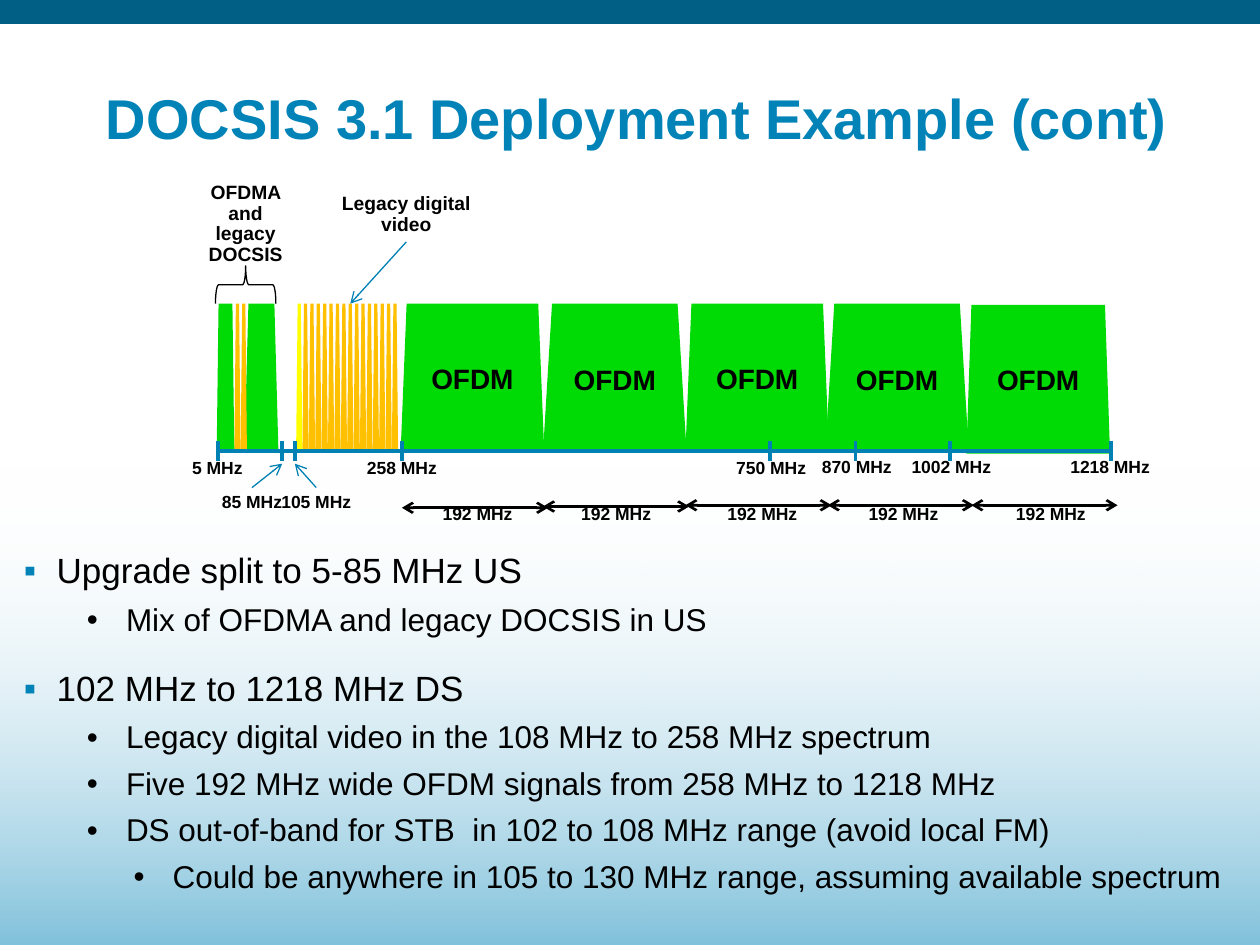
import dataclasses
from typing import Optional

import lxml.etree
import pptx
import pptx.dml.color
import pptx.enum.shapes
import pptx.enum.text
import pptx.oxml
import pptx.oxml.ns
import pptx.util

Inches = pptx.util.Inches
Pt = pptx.util.Pt
Shapes = pptx.enum.shapes.MSO_SHAPE
Align = pptx.enum.text.PP_ALIGN
Anchor = pptx.enum.text.MSO_ANCHOR
qn = pptx.oxml.ns.qn

BLUE, TITLE_BLUE, BLACK, WHITE = "0081B4", "0183B7", "000000", "FFFFFF"
GREEN, ORANGE, YELLOW = "00DA05", "FFC000", "FFFF00"
BAND_TOP, BAND_HEIGHT, STRIPE_WIDTH = 2.41, 1.18, 0.05


@dataclasses.dataclass
class Label:
    text: str
    left: float
    top: float
    width: float
    height: float = 0.25
    size: float = 10
    wrap: bool = False


@dataclasses.dataclass
class Band:
    left: float
    width: float
    color: str
    inset: float = 0.25
    text: str = ""
    top: float = BAND_TOP


@dataclasses.dataclass
class Bullet:
    text: str
    level: int = 0
    space_after: float = 6


@dataclasses.dataclass
class BulletStyle:
    size: float
    indent: float
    hanging: float
    mark: str
    color: str


BULLET_STYLES = [
    BulletStyle(20, 0.26, 0.26, "▪", TITLE_BLUE),
    BulletStyle(18, 0.81, 0.31, "•", BLACK),
    BulletStyle(18, 1.18, 0.31, "•", BLACK),
]
BULLETS = [
    Bullet("Upgrade split to 5-85 MHz US"),
    Bullet("Mix of OFDMA and legacy DOCSIS in US", 1, 18),
    Bullet("102 MHz to 1218 MHz DS"),
    Bullet("Legacy digital video in the 108 MHz to 258 MHz spectrum", 1),
    Bullet("Five 192 MHz wide OFDM signals from 258 MHz to 1218 MHz", 1),
    Bullet("DS out-of-band for STB  in 102 to 108 MHz range (avoid local FM)", 1),
    Bullet("Could be anywhere in 105 to 130 MHz range, assuming available spectrum", 2),
]
FREQUENCY_LABELS = [
    Label("5 MHz", 1.42, 3.6, 0.61),
    Label("258 MHz", 2.81, 3.6, 0.76),
    Label("750 MHz", 5.74, 3.6, 0.76),
    Label("870 MHz", 6.42, 3.59, 0.76),
    Label("1002 MHz", 7.13, 3.59, 0.84),
    Label("1218 MHz", 8.39, 3.59, 0.84),
]
TICKS = [1.73, 2.24, 2.34, 3.19, 6.11, 6.79, 7.54, 8.82]
UPSTREAM_BANDS = [
    Band(1.94, 0.27, GREEN, 0.119),
    Band(1.91, STRIPE_WIDTH, ORANGE),
    Band(1.86, STRIPE_WIDTH, ORANGE),
    Band(1.72, 0.14, GREEN, 0.107),
    Band(2.35, STRIPE_WIDTH, YELLOW),
]
OFDM_BANDS = [
    Band(left, 1.14, GREEN, inset, "OFDM", top)
    for left, inset, top in [
        (6.55, 0.063, 2.41), (5.44, 0.042, 2.41), (7.67, 0.035, 2.42),
        (4.31, 0.063, 2.41), (3.18, 0.042, 2.41),
    ]
]
CHANNEL_SPANS = [(3.19, 4.03, 3.41), (4.31, 4.02, 4.51), (5.44, 4.01, 5.67),
                 (6.57, 4.01, 6.79), (7.71, 4.01, 7.96)]


def rgb(color: str) -> pptx.dml.color.RGBColor:
    return pptx.dml.color.RGBColor.from_string(color)


def format_paragraph(paragraph, size: float, color: str, bold: bool = False,
                     alignment=Align.LEFT, spacing: float = 0.9) -> None:
    paragraph.alignment = alignment
    paragraph.line_spacing = spacing
    for run in paragraph.runs:
        run.font.name = "Arial"
        run.font.size = Pt(size)
        run.font.bold = bold
        run.font.color.rgb = rgb(color)


def add_box(slide, left: float, top: float, width: float, height: float):
    shape = slide.shapes.add_textbox(Inches(left), Inches(top), Inches(width), Inches(height))
    frame = shape.text_frame
    frame.word_wrap = True
    frame.margin_left = frame.margin_right = Inches(0.09)
    frame.margin_top = frame.margin_bottom = Inches(0.04)
    return shape


def add_label(slide, label: Label):
    shape = slide.shapes.add_textbox(Inches(label.left), Inches(label.top),
                                     Inches(label.width), Inches(label.height))
    frame = shape.text_frame
    frame.text = label.text
    frame.word_wrap = label.wrap
    frame.auto_size = pptx.enum.text.MSO_AUTO_SIZE.SHAPE_TO_FIT_TEXT
    format_paragraph(frame.paragraphs[0], label.size, BLACK, True, Align.CENTER)
    return shape


def add_shape(slide, kind, left: float, top: float, width: float, height: float,
              color: Optional[str] = None):
    shape = slide.shapes.add_shape(kind, Inches(left), Inches(top), Inches(width), Inches(height))
    shape.shadow.inherit = False
    shape.line.fill.background()
    if color is None:
        shape.fill.background()
    else:
        shape.fill.solid()
        shape.fill.fore_color.rgb = rgb(color)
    return shape


def add_band(slide, band: Band):
    shape = add_shape(slide, Shapes.TRAPEZOID, band.left, band.top, band.width, BAND_HEIGHT, band.color)
    shape.adjustments[0] = band.inset
    if band.text:
        shape.text_frame.text = band.text
        shape.text_frame.word_wrap = False
        shape.text_frame.vertical_anchor = Anchor.MIDDLE
        format_paragraph(shape.text_frame.paragraphs[0], 16, BLACK, True, Align.CENTER)
    return shape


def add_line(slide, start: tuple[float, float], end: tuple[float, float], color: str,
             width: float, arrows: tuple[str, ...] = ()):
    line = slide.shapes.add_connector(pptx.enum.shapes.MSO_CONNECTOR.STRAIGHT,
                                      *map(Inches, start), *map(Inches, end))
    line.line.color.rgb = rgb(color)
    line.line.width = Pt(width)
    for arrow in arrows:
        lxml.etree.SubElement(line.line._get_or_add_ln(), qn(f"a:{arrow}"), type="arrow")
    lxml.etree.SubElement(line._element.spPr, qn("a:effectLst"))
    return line


def add_bullets(slide) -> None:
    frame = add_box(slide, 0.1, 4.34, 9.82, 2.92).text_frame
    frame.text = "\n".join(bullet.text for bullet in BULLETS)
    for paragraph, bullet in zip(frame.paragraphs, BULLETS):
        style = BULLET_STYLES[bullet.level]
        paragraph.level = bullet.level
        format_paragraph(paragraph, style.size, BLACK, spacing=0.95)
        paragraph.space_after = Pt(bullet.space_after)
        properties = paragraph._p.get_or_add_pPr()
        properties.set("marL", str(Inches(style.indent)))
        properties.set("indent", str(-Inches(style.hanging)))
        color = lxml.etree.SubElement(properties, qn("a:buClr"))
        lxml.etree.SubElement(color, qn("a:srgbClr"), val=style.color)
        lxml.etree.SubElement(properties, qn("a:buFont"), typeface="Arial")
        lxml.etree.SubElement(properties, qn("a:buChar"), char=style.mark)


def add_background(slide) -> None:
    add_shape(slide, Shapes.RECTANGLE, 0, 0, 10, 0.19, "015F85")
    fade = add_shape(slide, Shapes.RECTANGLE, 0, 3.68, 10, 3.82, WHITE)
    fade.fill.gradient()
    fade.fill.gradient_angle = 270
    for stop, color in zip(fade.fill.gradient_stops, (WHITE, TITLE_BLUE)):
        stop.color.rgb = rgb(color)
    opacities = ("0", "50000")
    for color, opacity in zip(fade._element.spPr.iter(qn("a:srgbClr")), opacities):
        lxml.etree.SubElement(color, qn("a:alpha"), val=opacity)


def add_spectrum(slide) -> None:
    stripes = [add_band(slide, Band(2.4 + index * 0.71 / 14, STRIPE_WIDTH, ORANGE))
               for index in range(15)]
    for band in UPSTREAM_BANDS + OFDM_BANDS:
        add_band(slide, band)
    add_line(slide, (1.72, 3.58), (8.82, 3.58), BLUE, 2.25)
    for tick in TICKS:
        add_line(slide, (tick, 3.5), (tick, 3.66), BLUE, 2.25)
    for label in FREQUENCY_LABELS:
        add_label(slide, label)
    for left, top, label_left in CHANNEL_SPANS:
        add_line(slide, (left, top), (left + 1.16, top), BLACK, 1.5, ("headEnd", "tailEnd"))
        add_label(slide, Label("192 MHz", label_left, 3.96, 0.76))
    for label, target in [(Label("105 MHz", 2.13, 3.87, 0.76), 2.34),
                          (Label("85 MHz", 1.66, 3.87, 0.68), 2.24)]:
        box = add_label(slide, label)
        pointer = add_line(slide, (label.left, label.top), (target, 3.68), BLUE, 0.75, ("tailEnd",))
        pointer.begin_connect(box, 0)
    brace = add_shape(slide, Shapes.RIGHT_BRACE, 1.8, 2.02, 0.3, 0.48)
    brace.rotation = 270
    brace.line.color.rgb = rgb(BLACK)
    brace.line.width = Pt(0.75)
    add_label(slide, Label("OFDMA and legacy DOCSIS", 1.48, 1.4, 0.94, 0.77, 11, True))
    video = add_label(slide, Label("Legacy digital video", 2.56, 1.49, 1.33, 0.43, 11, True))
    pointer = add_line(slide, (3.22, 1.93), (2.78, 2.41), BLUE, 0.75, ("tailEnd",))
    pointer.begin_connect(video, 2)
    pointer.end_connect(stripes[7], 0)


def main() -> None:
    presentation = pptx.Presentation()
    presentation.slide_width, presentation.slide_height = Inches(10), Inches(7.5)
    slide = presentation.slides.add_slide(presentation.slide_layouts[6])
    add_background(slide)
    title = add_box(slide, 0.75, 0.32, 8.75, 0.92).text_frame
    title.text = "DOCSIS 3.1 Deployment Example (cont)"
    title.vertical_anchor = Anchor.BOTTOM
    format_paragraph(title.paragraphs[0], 32, TITLE_BLUE, True)
    add_bullets(slide)
    add_spectrum(slide)
    presentation.save("out.pptx")


if __name__ == "__main__":
    main()
